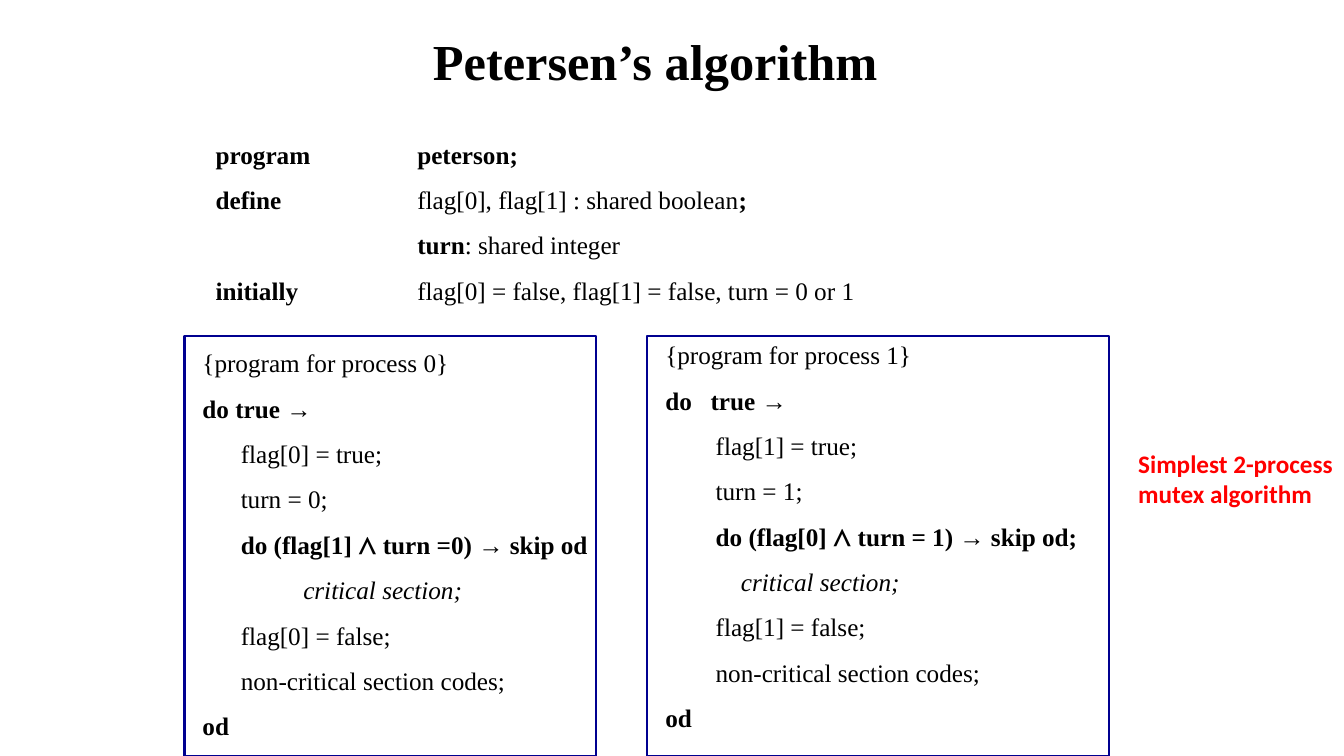
import pptx
import pptx.dml.color
import pptx.enum.shapes
import pptx.enum.text
import pptx.oxml.ns
import pptx.util
from dataclasses import dataclass
from lxml import etree

Inches = pptx.util.Inches


@dataclass(frozen=True)
class Theme:
    ink: str = "000000"
    frame: str = "000090"
    accent: str = "FF0000"
    serif: str = "Times New Roman"
    sans: str = "Calibri"
    title_size: int = 36
    body_size: int = 18
    frame_width: float = 1.5
    code_spacing: float = 1.5


THEME = Theme()
BOLD, ITALIC = {"bold": True}, {"italic": True}


def rgb(value):
    return pptx.dml.color.RGBColor.from_string(value)


def add_run(p, text, font=THEME.serif, size=THEME.body_size, color=THEME.ink,
            bold=False, italic=False):
    r = p.add_run()
    r.text = text
    r.font.name, r.font.size = font, pptx.util.Pt(size)
    r.font.bold, r.font.italic = bold, italic
    r.font.color.rgb = rgb(color)


def set_layout(p, indent, tab):
    """Give a paragraph a left indent and one tab stop, both in inches."""
    pPr = p._p.get_or_add_pPr()
    if indent:
        pPr.set("marL", str(Inches(indent)))
        pPr.set("indent", "0")
    if tab:
        tabs = etree.SubElement(pPr, pptx.oxml.ns.qn("a:tabLst"))
        etree.SubElement(tabs, pptx.oxml.ns.qn("a:tab"), pos=str(Inches(tab)), algn="l")


def add_text(slide, box, lines, wrap=True, spacing=None, align=None, tab=None, **fmt):
    """Each line is (indent, (text, format), ...)."""
    tf = slide.shapes.add_textbox(*map(Inches, box)).text_frame
    tf.word_wrap = wrap
    tf.auto_size = pptx.enum.text.MSO_AUTO_SIZE.SHAPE_TO_FIT_TEXT
    for i, (indent, *runs) in enumerate(lines):
        p = tf.add_paragraph() if i else tf.paragraphs[0]
        p.line_spacing, p.alignment = spacing, align
        set_layout(p, indent, tab)
        for text, run_fmt in runs:
            add_run(p, text, **{**fmt, **run_fmt})


def add_title(slide, box):
    add_text(slide, box, [(0, ("Petersen’s algorithm", BOLD))], wrap=False,
             align=pptx.enum.text.PP_ALIGN.CENTER, size=THEME.title_size)


def add_declarations(slide, box):
    lines = [
        (0, ("program\tpeterson;", BOLD)),
        (0, ("define\t", BOLD), ("flag[0], flag[1] : shared boolean", {}), (";", BOLD)),
        (0, ("\tturn", BOLD), (": shared integer", {})),
        (0, ("initially\t", BOLD), ("flag[0] = false, flag[1] = false, turn = 0 or 1", {})),
    ]
    add_text(slide, box, lines, spacing=THEME.code_spacing, tab=2)


def add_process(slide, box, number, loop, guard, text_top, body, critical):
    """Frame one process; body and critical are its two indents."""
    left, top, width, height = box
    lines = [
        (0, (f"{{program for process {number}}}", {})),
        (0, (loop, BOLD)),
        (body, (f"flag[{number}] = true;", {})),
        (body, (f"turn = {number};", {})),
        (body, (guard, BOLD)),
        (critical, ("critical section;", ITALIC)),
        (body, (f"flag[{number}] = false;", {})),
        (body, ("non-critical section codes;", {})),
        (0, ("od", BOLD)),
    ]
    add_text(slide, (left + 0.08, top + text_top, 4.5, height + 0.4), lines,
             spacing=THEME.code_spacing, tab=0.45)
    sp = slide.shapes.add_shape(pptx.enum.shapes.MSO_SHAPE.RECTANGLE, *map(Inches, box))
    sp.shadow.inherit = False
    sp.fill.background()
    sp.line.color.rgb = rgb(THEME.frame)
    sp.line.width = pptx.util.Pt(THEME.frame_width)


def add_remark(slide, box):
    lines = [(0, (text, BOLD)) for text in ("Simplest 2-process", "mutex algorithm")]
    add_text(slide, box, lines, wrap=False, font=THEME.sans, color=THEME.accent)


def build_slide(prs):
    slide = prs.slides.add_slide(prs.slide_layouts[6])
    add_title(slide, (4.17, 0.25, 4.66, 0.71))
    add_declarations(slide, (2.04, 1.18, 8.42, 2.35))
    add_process(slide, (1.83, 3.33, 4.08, 4.17), 0, "do true →",
                "do (flag[1] ⋀ turn =0) → skip od",
                text_top=-0.08, body=0.38, critical=1)
    add_process(slide, (6.42, 3.33, 4.58, 4.17), 1, "do\ttrue →",
                "do (flag[0] ⋀ turn = 1) → skip od;",
                text_top=-0.16, body=0.5, critical=0.75)
    add_remark(slide, (11.19, 4.4, 2.15, 0.71))


def main():
    prs = pptx.Presentation()
    prs.slide_width, prs.slide_height = Inches(13.33), Inches(7.5)
    build_slide(prs)
    prs.save("out.pptx")


if __name__ == "__main__":
    main()
